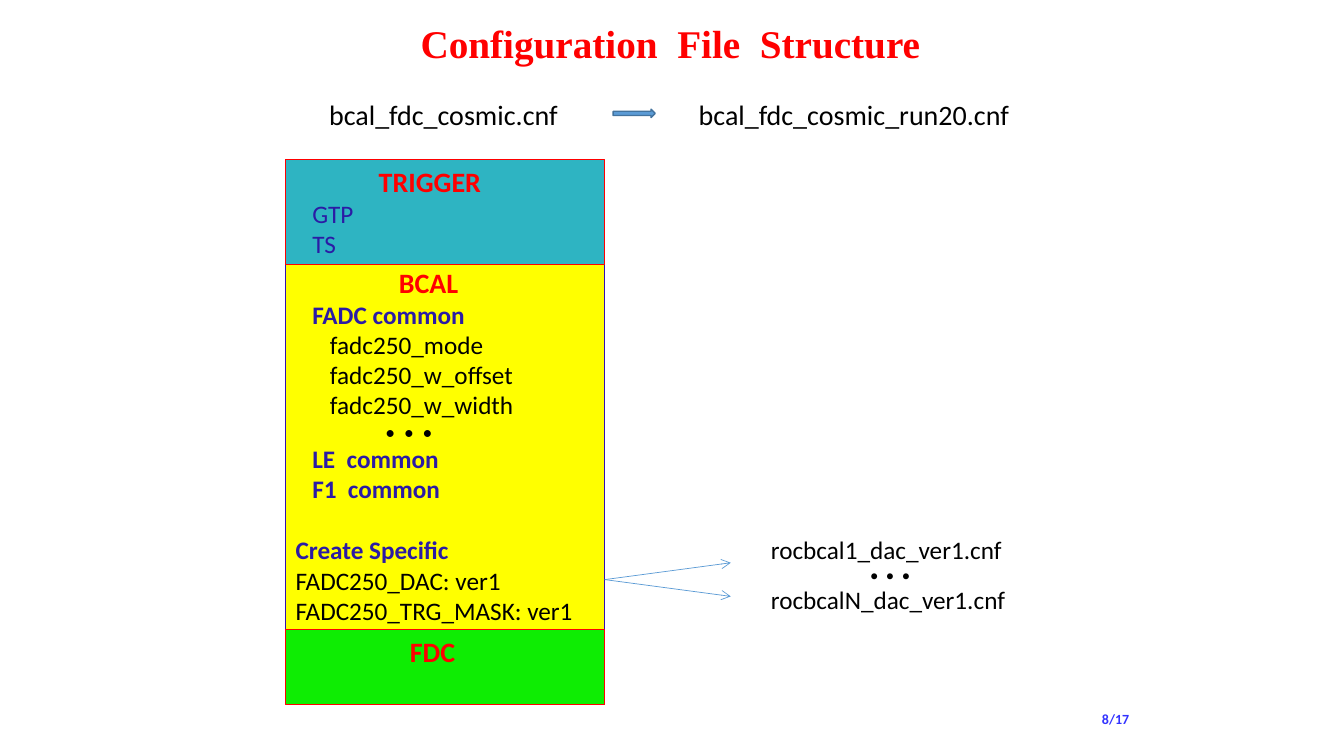
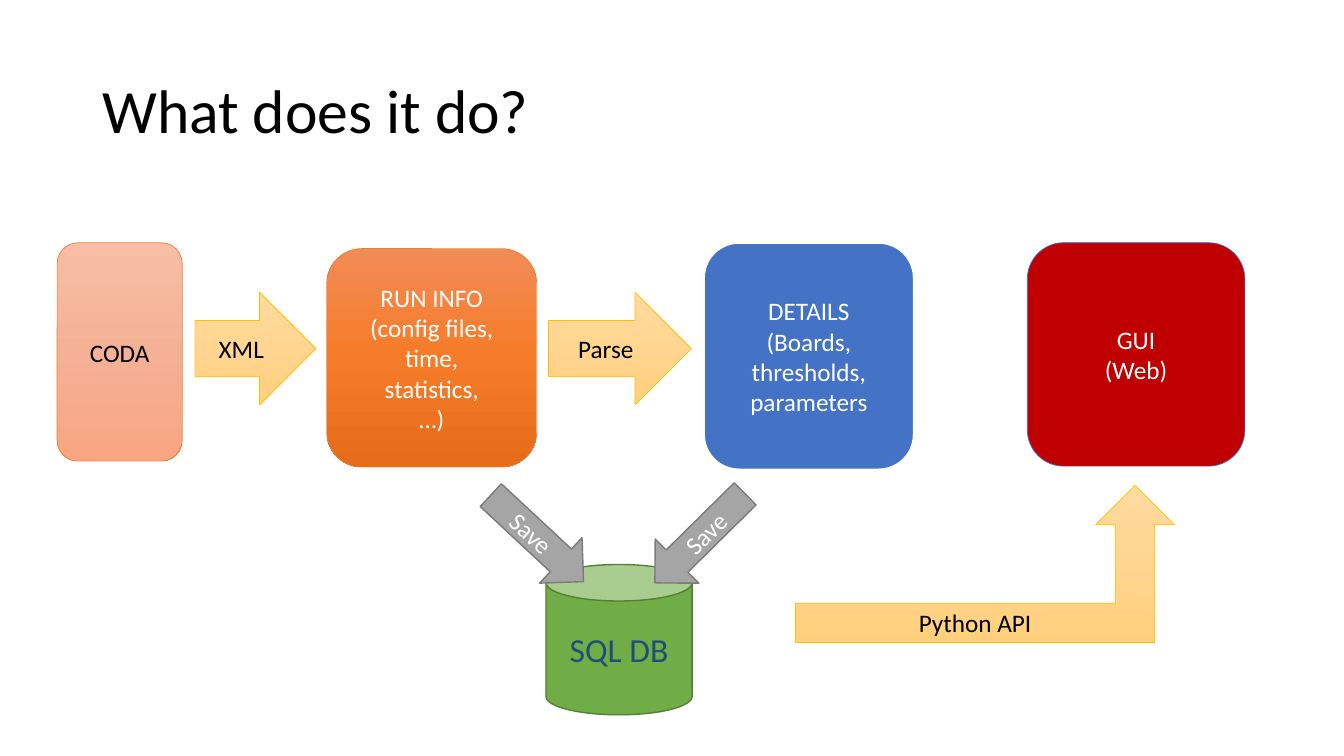
from collections import namedtuple
from copy import deepcopy

from pptx import Presentation
from pptx.dml.color import RGBColor
from pptx.enum.shapes import MSO_CONNECTOR, MSO_SHAPE
from pptx.enum.text import MSO_ANCHOR, PP_ALIGN
from pptx.oxml.ns import qn
from pptx.oxml.xmlchemy import OxmlElement
from pptx.util import Inches, Pt

RECT, ROUND, CAN = MSO_SHAPE.RECTANGLE, MSO_SHAPE.ROUNDED_RECTANGLE, MSO_SHAPE.CAN
ARROW, BENT_ARROW = MSO_SHAPE.RIGHT_ARROW, MSO_SHAPE.BENT_UP_ARROW
STRAIGHT = MSO_CONNECTOR.STRAIGHT
TOP, MIDDLE = MSO_ANCHOR.TOP, MSO_ANCHOR.MIDDLE
LEFT, CENTER = PP_ALIGN.LEFT, PP_ALIGN.CENTER

SLIDE_W, SLIDE_H = Inches(13.33), Inches(7.5)
COLS, ROWS = 160, 90
SANS, SERIF = "Calibri", "Times New Roman"

BLACK = RGBColor(0x00, 0x00, 0x00)
WHITE = RGBColor(0xFF, 0xFF, 0xFF)
RED = RGBColor(0xFF, 0x00, 0x00)
INDIGO = RGBColor(0x2B, 0x1B, 0xA5)
VIOLET = RGBColor(0x32, 0x10, 0xB0)
PAGE_BLUE = RGBColor(0x33, 0x33, 0xFF)
YELLOW = RGBColor(0xFF, 0xFF, 0x00)
TEAL = RGBColor(0x2E, 0xB4, 0xC2)
GREEN = RGBColor(0x0E, 0xED, 0x03)
SKY = RGBColor(0x5B, 0x9B, 0xD5)
SKY_EDGE = RGBColor(0x43, 0x73, 0x9E)
ORANGE = RGBColor(0xED, 0x7D, 0x31)
GOLD = RGBColor(0xFF, 0xC0, 0x00)
BLUE = RGBColor(0x44, 0x72, 0xC4)
CRIMSON = RGBColor(0xC0, 0x00, 0x00)
LEAF = RGBColor(0x70, 0xAD, 0x47)
LEAF_EDGE = RGBColor(0x53, 0x80, 0x35)
NAVY = RGBColor(0x1F, 0x4E, 0x79)
GRAY = RGBColor(0xA5, 0xA5, 0xA5)
GRAY_EDGE = RGBColor(0x7A, 0x7A, 0x7A)
PEACH_FADE = [RGBColor(0xF7, 0xBD, 0xA5), RGBColor(0xF5, 0xB1, 0x96), RGBColor(0xF8, 0xA5, 0x82)]
ORANGE_FADE = [RGBColor(0xF1, 0x8C, 0x57), RGBColor(0xF6, 0x7B, 0x28), RGBColor(0xE5, 0x6C, 0x19)]
GOLD_FADE = [RGBColor(0xFF, 0xDB, 0x9E), RGBColor(0xFF, 0xD5, 0x90), RGBColor(0xFF, 0xD0, 0x7C)]

Line = namedtuple("Line", "text size color bold indent before font",
                  defaults=(18, BLACK, False, 0, 0, SANS))


def col(n):
    """Return the length of n grid columns."""
    return round(SLIDE_W * n / COLS)


def row(n):
    """Return the length of n grid rows."""
    return round(SLIDE_H * n / ROWS)


def place(box):
    """Turn a grid box into left, top, width and height."""
    x, y, w, h = box
    return col(x), row(y), col(w), row(h)


def write(sp, lines, align=LEFT, anchor=TOP):
    """Fill a shape with formatted lines, one paragraph each."""
    tf = sp.text_frame
    tf.word_wrap = True
    tf.vertical_anchor = anchor
    tf.text = "\n".join(line.text for line in lines)
    for p, line in zip(tf.paragraphs, lines):
        p.alignment = align
        if line.before:
            p.space_before = Pt(line.before)
        if line.indent:
            p._p.get_or_add_pPr().set("marL", str(col(line.indent)))
        for r in p.runs:
            r.font.name, r.font.size = line.font, Pt(line.size)
            r.font.bold, r.font.color.rgb = line.bold, line.color


def add_text(slide, box, lines, align=LEFT, anchor=TOP):
    """Add a text box."""
    sp = slide.shapes.add_textbox(*place(box))
    write(sp, lines, align, anchor)
    return sp


def add_title(slide, box, line, align=LEFT):
    """Add the slide title."""
    sp = add_text(slide, box, [line], align, MIDDLE)
    sp.text_frame.paragraphs[0].line_spacing = 0.9


def paint(sp, fill):
    """Fill a shape with one colour or a vertical three-stop fade."""
    if isinstance(fill, RGBColor):
        sp.fill.solid()
        sp.fill.fore_color.rgb = fill
        return
    sp.fill.gradient()
    sp.fill.gradient_angle = 270
    stops = sp._element.spPr.find(".//" + qn("a:gsLst"))
    stops.insert(1, deepcopy(stops[0]))
    for stop, pos, color in zip(sp.fill.gradient_stops, (0, 50000, 100000), fill):
        stop.color.rgb = color
        stop._gs.set("pos", str(pos))


def add_block(slide, kind, box, fill, edge, width):
    """Add a filled and outlined shape without shadow."""
    sp = slide.shapes.add_shape(kind, *place(box))
    sp.shadow.inherit = False
    paint(sp, fill)
    sp.line.color.rgb, sp.line.width = edge, Pt(width)
    return sp


def add_node(slide, kind, box, text, fill, edge, width=0.5, color=BLACK, size=18):
    """Add a shape with centred text."""
    sp = add_block(slide, kind, box, fill, edge, width)
    write(sp, [Line(t, size, color) for t in text.split("\n")], CENTER, MIDDLE)
    return sp


def add_arrow_line(slide, start, end):
    """Add a thin line with an open arrowhead."""
    cx = slide.shapes.add_connector(STRAIGHT, col(start[0]), row(start[1]),
                                    col(end[0]), row(end[1]))
    cx.line.color.rgb, cx.line.width = SKY, Pt(0.5)
    head = OxmlElement("a:tailEnd")
    head.set("type", "arrow")
    cx.line._get_or_add_ln().append(head)
    cx._element.spPr.append(OxmlElement("a:effectLst"))


def add_file_names(slide, x, y):
    """Place the file name, the arrow and the run file name in a row."""
    add_text(slide, (x, y, 31, 5.3), [Line("bcal_fdc_cosmic.cnf", 20)])
    add_block(slide, ARROW, (x + 35, y + 2, 5, 1), SKY, SKY_EDGE, 1)
    add_text(slide, (x + 44, y, 41, 5.3), [Line("bcal_fdc_cosmic_run20.cnf", 20)])


def add_file_sections(slide, x, y, w):
    """Stack the sections of the configuration file."""
    def heading(text, indent):
        return Line(text, 20, RED, True, indent)

    def group(text, indent=2, before=0):
        return Line(text, 18, INDIGO, True, indent, before)

    bcal = [heading("BCAL", 12.3), group("FADC common")]
    bcal += [Line("fadc250_" + s, indent=4.1) for s in ("mode", "w_offset", "w_width")]
    bcal += [Line("•  •  •", 14, indent=10.7), group("LE  common"), group("F1  common"),
             group("Create Specific", 0, 22),
             Line("FADC250_DAC: ver1"), Line("FADC250_TRG_MASK: ver1")]
    trigger = [heading("TRIGGER", 9.9)]
    trigger += [Line(t, color=INDIGO, indent=2) for t in ("GTP", "TS")]
    for top, h, fill, edge, lines in (
            (12, 44.4, YELLOW, VIOLET, bcal),
            (0, 12.5, TEAL, RED, trigger),
            (56, 8.9, GREEN, RED, [heading("FDC", 13.6)])):
        write(add_block(slide, RECT, (x, y + top, w, h), fill, edge, 0.75), lines)


def add_board_files(slide, x, y):
    """Fan out from a point to the list of board files."""
    for dy in (-2, 2):
        add_arrow_line(slide, (x, y), (x + 15, y + dy))
    add_text(slide, (x + 18.6, y - 6, 39.5, 10.9),
             [Line("rocbcal1_dac_ver1.cnf"), Line("•  •  •", 12, indent=11.8),
              Line("rocbcalN_dac_ver1.cnf")])


def build_structure_slide(slide):
    """Build the slide on the configuration file."""
    add_title(slide, (28.8, 1, 102, 9),
              Line("Configuration  File  Structure", 28, RED, True, font=SERIF), CENTER)
    add_file_names(slide, 38, 11)
    add_file_sections(slide, 34, 19, 38)
    add_board_files(slide, 72, 69)
    add_text(slide, (130, 84, 7, 3.2), [Line("8/17", 10, PAGE_BLUE, True)])


def add_stages(slide, y):
    """Place the four stages and the arrows between them."""
    add_node(slide, ROUND, (6.8, y, 14.9, 26), "CODA", PEACH_FADE, ORANGE)
    add_node(slide, ROUND, (38.9, y + 0.7, 25, 26),
             "RUN INFO\n(config files,\ntime,\nstatistics,\n…)", ORANGE_FADE, ORANGE, color=WHITE)
    add_node(slide, ROUND, (83.8, y, 25, 27),
             "DETAILS\n(Boards,\nthresholds,\nparameters", BLUE, WHITE, 1.5, WHITE)
    add_node(slide, ROUND, (122.3, y, 25.9, 26.6), "GUI\n(Web)", CRIMSON, BLUE, color=WHITE)
    for x, w, text in ((23.2, 14.4, "XML"), (65.3, 17, "Parse")):
        add_node(slide, ARROW, (x, y + 5.9, w, 13.4), text, GOLD_FADE, GOLD)


def add_storage(slide, x, y):
    """Place the database with the two arrows that save into it."""
    add_node(slide, CAN, (x, y, 17.4, 17.9), "SQL DB", LEAF, LEAF_EDGE, 1, NAVY, 24)
    for dx, angle, flip in ((-8.6, 43, "0"), (10.8, 315.4, "1")):
        sp = add_node(slide, ARROW, (x + dx, y - 6.8, 15.1, 7.4), "Save",
                      GRAY, GRAY_EDGE, 1, WHITE)
        sp.rotation = angle
        sp._element.spPr.find(qn("a:xfrm")).set("flipH", flip)


def build_flow_slide(slide):
    """Build the slide on the data flow."""
    add_title(slide, (11, 4.8, 138, 17.4), Line("What does it do?", 44))
    add_stages(slide, 28.9)
    add_storage(slide, 65, 67.2)
    add_node(slide, BENT_ARROW, (94.7, 57.8, 45.1, 18.7), "Python API", GOLD_FADE, GOLD)


def main():
    """Build and save the presentation."""
    prs = Presentation()
    prs.slide_width, prs.slide_height = SLIDE_W, SLIDE_H
    for build in (build_structure_slide, build_flow_slide):
        build(prs.slides.add_slide(prs.slide_layouts[6]))
    prs.save("out.pptx")


if __name__ == "__main__":
    main()
